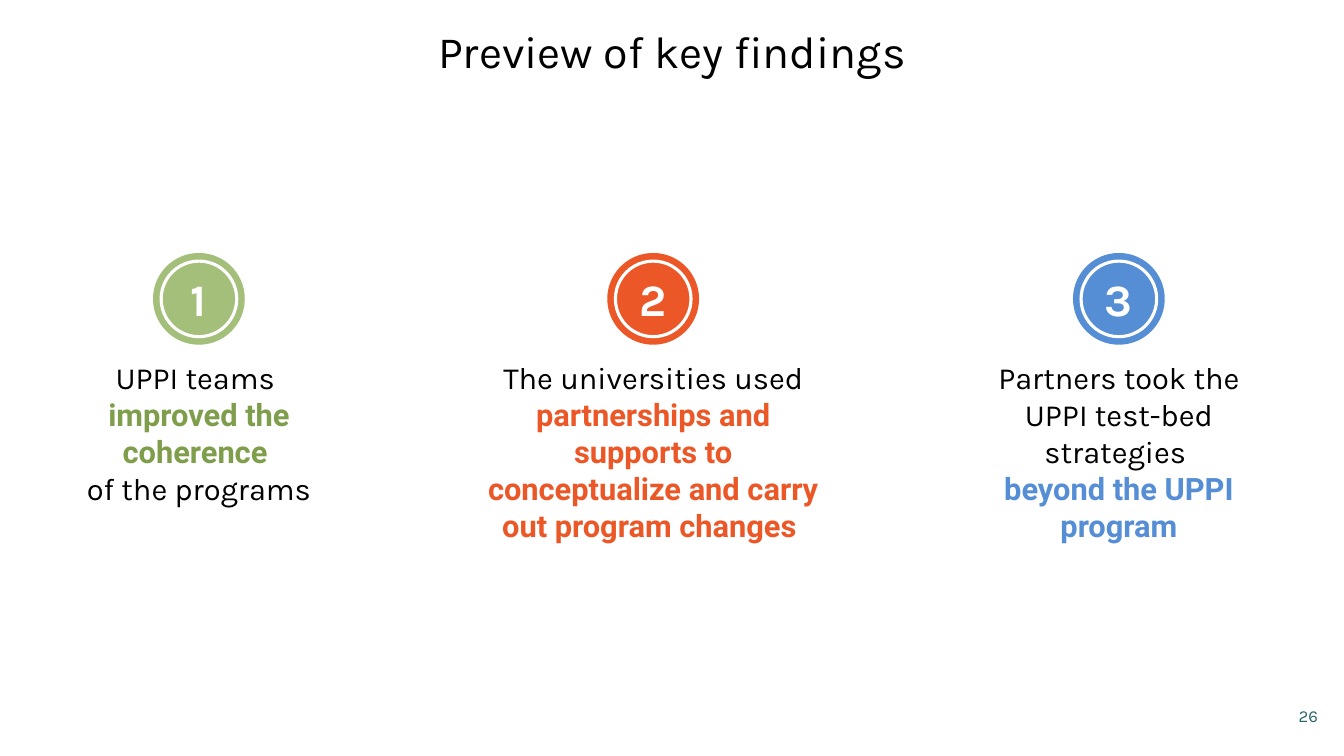
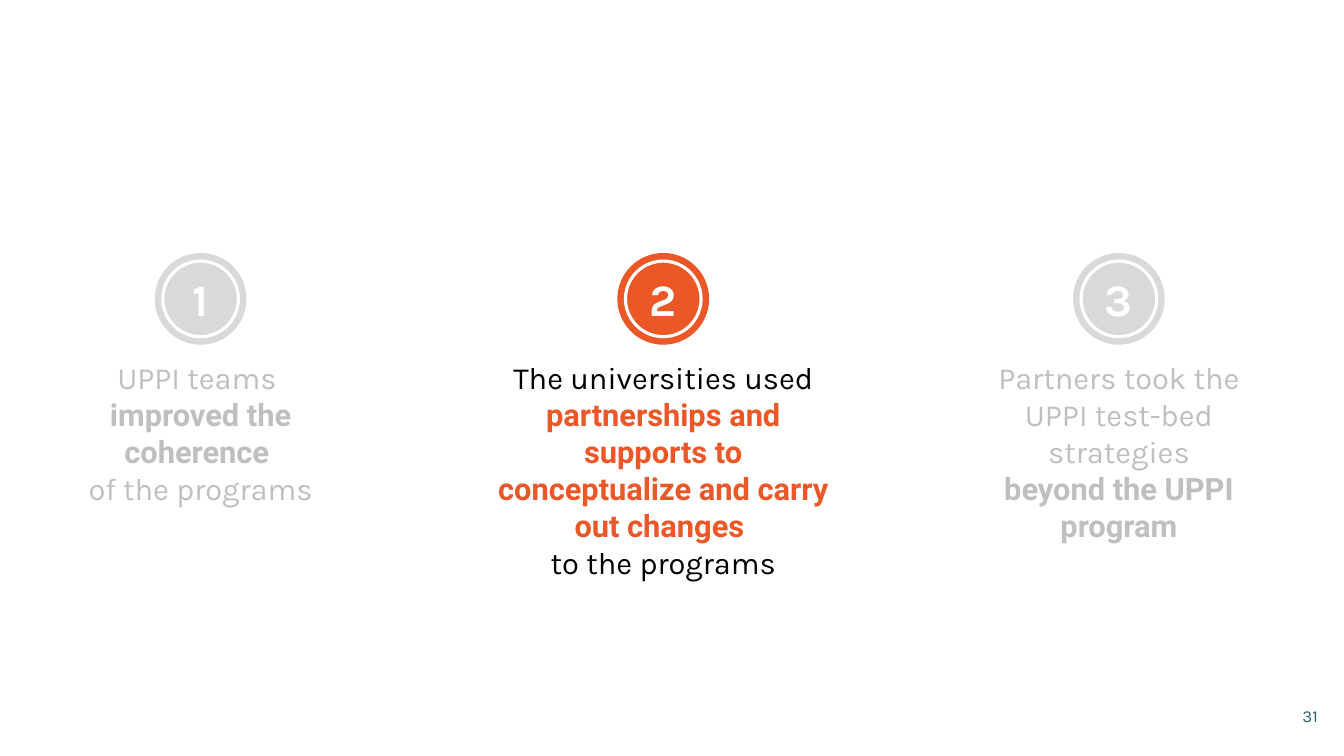
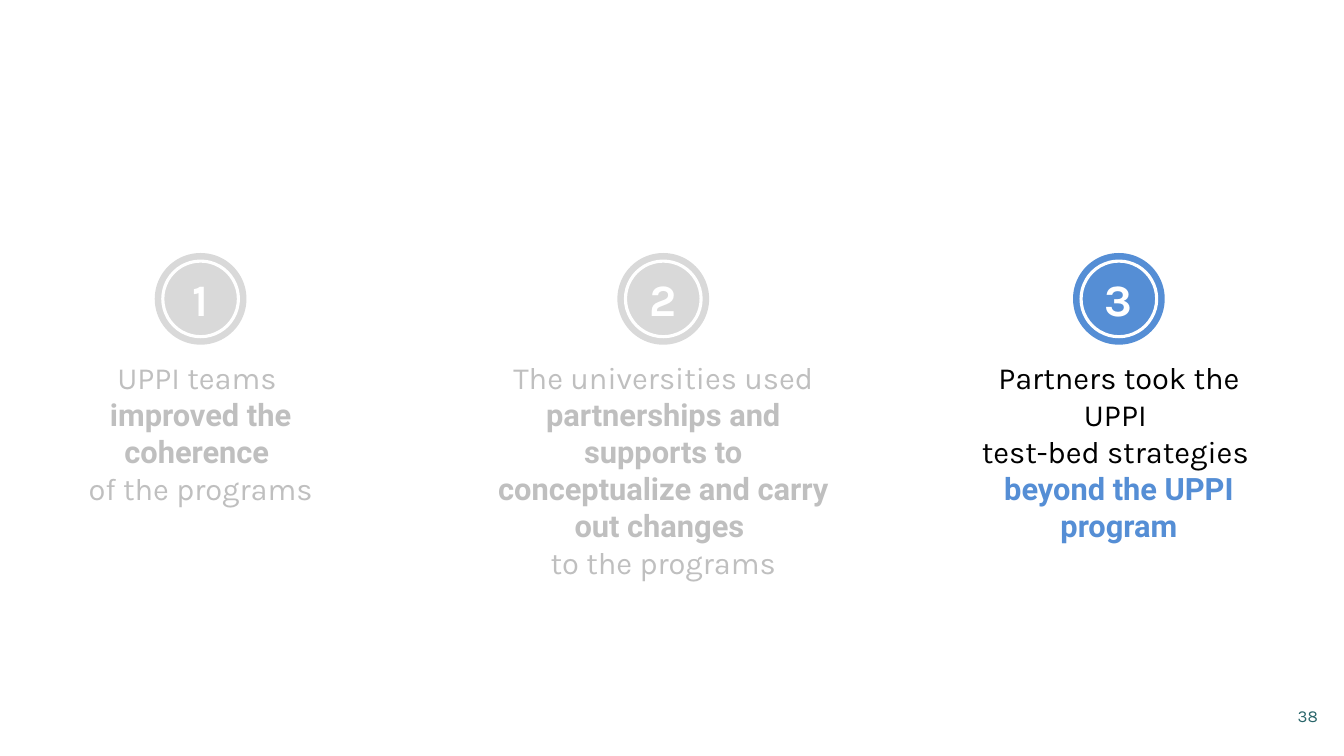
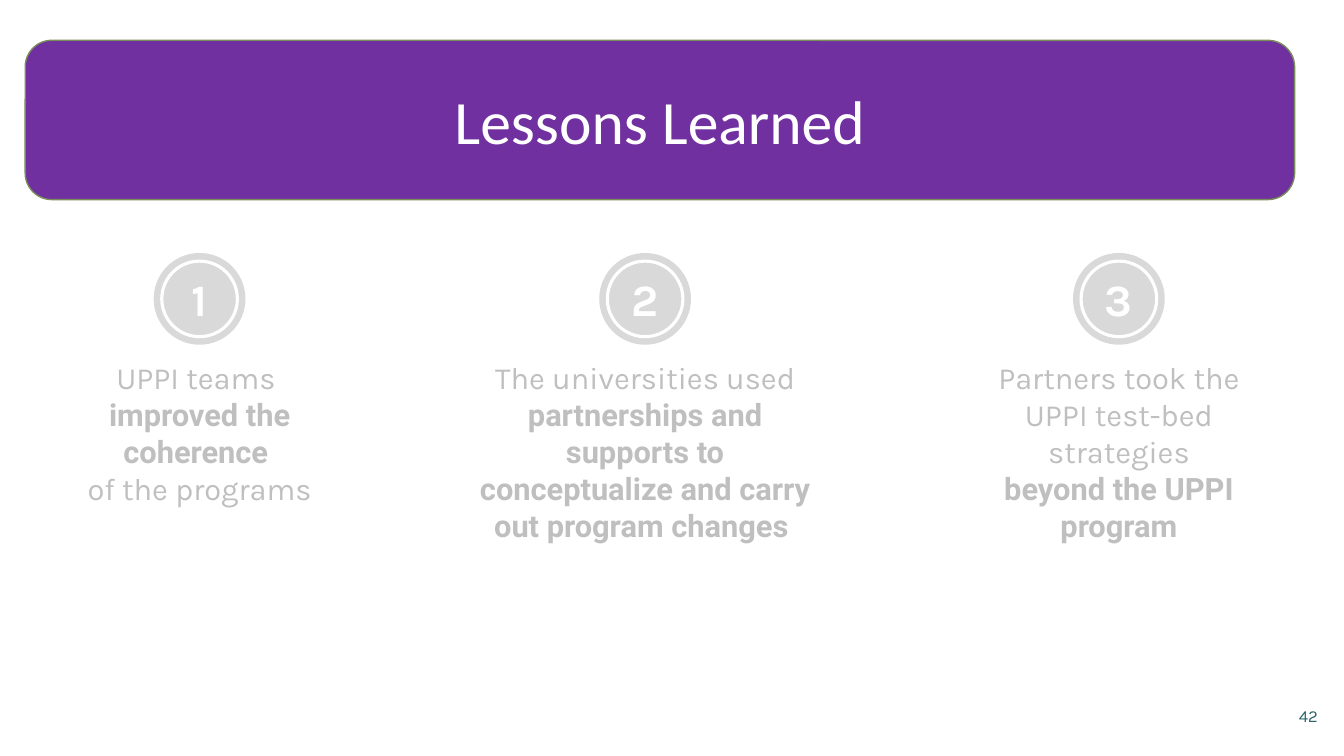
from pptx import Presentation
from pptx import util as u
from pptx.dml.color import RGBColor
from pptx.enum import shapes, text

COLORS = {
    "black": "000000",
    "white": "FFFFFF",
    "green": "7E9E4C",
    "light_green": "A4BF7A",
    "orange": "EB5726",
    "blue": "558ED5",
    "muted_text": "BFBFBF",
    "muted_disc": "D9D9D9",
    "purple": "7030A0",
    "olive": "798D5A",
    "teal": "29656A",
}
BODY_FONT, STRONG_FONT, BANNER_FONT = "Karla", "Roboto", "Calibri"
TITLE_ONLY, BLANK = 5, 6
COLUMNS, ROWS = 40, 30

TITLE_FRAME = (2.76, -0.76, 34.5, 5.8)
BANNER_FRAME = (0.75, 1.6, 37.78, 6.32)
NUMBER_FRAME = (30.52, 27.6, 9, 1.6)
DISC_TOP, DISC_SIZE, RING_INSET = 10.04, 3.64, 0.32
FINDING_TOP = 14.04
FINDING_SIZES = [(9.18, 6.32), (11.1, 7.8), (9.36, 6.32)]
ACCENTS = [("light_green", "green"), ("orange", "orange"), ("blue", "blue")]

# Each paragraph pairs plain wording with emphasised wording.
TEAMS = [("UPPI teams ", ""), ("", "improved the coherence "), ("of the programs", "")]
UNIVERSITIES = [("The universities used ",
                 "partnerships and supports to conceptualize and carry out program changes ")]
UNIVERSITIES_LONG = [("The universities used ",
                      "partnerships and supports to conceptualize and carry out changes "),
                     ("to the programs", "")]
BEYOND = ("", "beyond the UPPI program")
PARTNERS = [("Partners took the UPPI test-bed strategies", ""), BEYOND]
PARTNERS_PREVIEW = [("Partners took the UPPI test-bed strategies ", ""), BEYOND]
PARTNERS_FOCUS = [("Partners took the UPPI ", ""), ("test-bed strategies ", ""), BEYOND]


class Deck:
    def __init__(self):
        self.deck = Presentation()
        self.deck.slide_width = u.Inches(13.33)
        self.deck.slide_height = u.Inches(7.5)
        self.page = None

    def across(self, columns):
        return round(self.deck.slide_width * columns / COLUMNS)

    def down(self, rows):
        return round(self.deck.slide_height * rows / ROWS)

    def frame(self, left, top, width, height):
        return self.across(left), self.down(top), self.across(width), self.down(height)

    def color(self, name):
        return RGBColor.from_string(COLORS[name])

    def font(self, span, size, color, name=BODY_FONT, bold=False):
        span.font.size = u.Pt(size)
        span.font.name = name
        span.font.bold = bold
        span.font.color.rgb = self.color(color)

    def line_of_text(self, shape, wording, size, color, align=text.PP_ALIGN.CENTER, **style):
        shape.text_frame.text = wording
        shape.text_frame.word_wrap = True
        shape.text_frame.vertical_anchor = text.MSO_ANCHOR.MIDDLE
        para = shape.text_frame.paragraphs[0]
        para.alignment = align
        self.font(para.runs[0], size, color, **style)
        return para

    def shape(self, parent, kind, frame, fill=None, line=None, weight=1):
        shape = parent.add_shape(kind, *frame)
        shape.shadow.inherit = False
        if fill:
            shape.fill.solid()
            shape.fill.fore_color.rgb = self.color(fill)
        else:
            shape.fill.background()
        if line:
            shape.line.color.rgb = self.color(line)
            shape.line.width = u.Pt(weight)
        else:
            shape.line.fill.background()
        return shape

    def new_page(self, number, layout=BLANK):
        self.page = self.deck.slides.add_slide(self.deck.slide_layouts[layout])
        box = self.page.shapes.add_textbox(*self.frame(*NUMBER_FRAME))
        self.line_of_text(box, str(number), 12, "teal", text.PP_ALIGN.RIGHT)

    def title(self, wording, frame, size, color, name=BODY_FONT):
        title = self.page.shapes.title
        title.left, title.top, title.width, title.height = self.frame(*frame)
        return self.line_of_text(title, wording, size, color, name=name)

    def banner(self, wording):
        band = self.shape(self.page.shapes, shapes.MSO_SHAPE.ROUNDED_RECTANGLE,
                          self.frame(*BANNER_FRAME), "purple", "olive")
        title = self.page.shapes.title
        title._element.addprevious(band._element)
        self.title(wording, BANNER_FRAME, 44, "white", BANNER_FONT)

    def badge(self, number, center, fill):
        group = self.page.shapes.add_group_shape().shapes
        size, inset = self.down(DISC_SIZE), self.down(RING_INSET)
        left, top = self.across(center) - size // 2, self.down(DISC_TOP)
        oval = shapes.MSO_SHAPE.OVAL
        disc = self.shape(group, oval, (left, top, size, size), fill)
        frame = disc.text_frame
        frame.margin_left = frame.margin_right = frame.margin_top = frame.margin_bottom = 0
        self.line_of_text(disc, str(number), 32, "white", bold=True)
        ring = size - 2 * inset
        self.shape(group, oval, (left + inset, top + inset, ring, ring), None, "white", 2.25)

    def finding(self, paragraphs, center, size, color, accent):
        width, height = size
        box = self.page.shapes.add_textbox(
            *self.frame(center - width / 2, FINDING_TOP, width, height))
        frame = box.text_frame
        frame.word_wrap = True
        frame.auto_size = text.MSO_AUTO_SIZE.SHAPE_TO_FIT_TEXT
        for index, (plain, strong) in enumerate(paragraphs):
            para = frame.add_paragraph() if index else frame.paragraphs[0]
            para.alignment = text.PP_ALIGN.CENTER
            if plain:
                span = para.add_run()
                span.text = plain
                self.font(span, 22, color)
            if strong:
                span = para.add_run()
                span.text = strong
                self.font(span, 22, accent, STRONG_FONT, True)

    def findings(self, wordings, centers, active=()):
        columns = zip(wordings, centers, FINDING_SIZES, ACCENTS)
        for number, (paragraphs, center, size, accents) in enumerate(columns, 1):
            if number in active:
                disc, accent = accents
                color = "black"
            else:
                disc, color, accent = "muted_disc", "muted_text", "muted_text"
            self.badge(number, center, disc)
            self.finding(paragraphs, center, size, color, accent)


def main():
    deck = Deck()

    deck.new_page(26, TITLE_ONLY)
    para = deck.title("Preview of key findings", TITLE_FRAME, 32, "black")
    para.line_spacing = 0.9
    deck.findings([TEAMS, UNIVERSITIES, PARTNERS_PREVIEW], (5.92, 19.44, 33.3), (1, 2, 3))

    for number, partners, active in [(31, PARTNERS, 2), (38, PARTNERS_FOCUS, 3)]:
        deck.new_page(number)
        deck.findings([TEAMS, UNIVERSITIES_LONG, partners], (5.97, 19.74, 33.3), (active,))

    deck.new_page(42, TITLE_ONLY)
    deck.banner("Lessons Learned")
    deck.findings([TEAMS, UNIVERSITIES, PARTNERS], (5.94, 19.2, 33.3))

    deck.deck.save("out.pptx")


if __name__ == "__main__":
    main()
